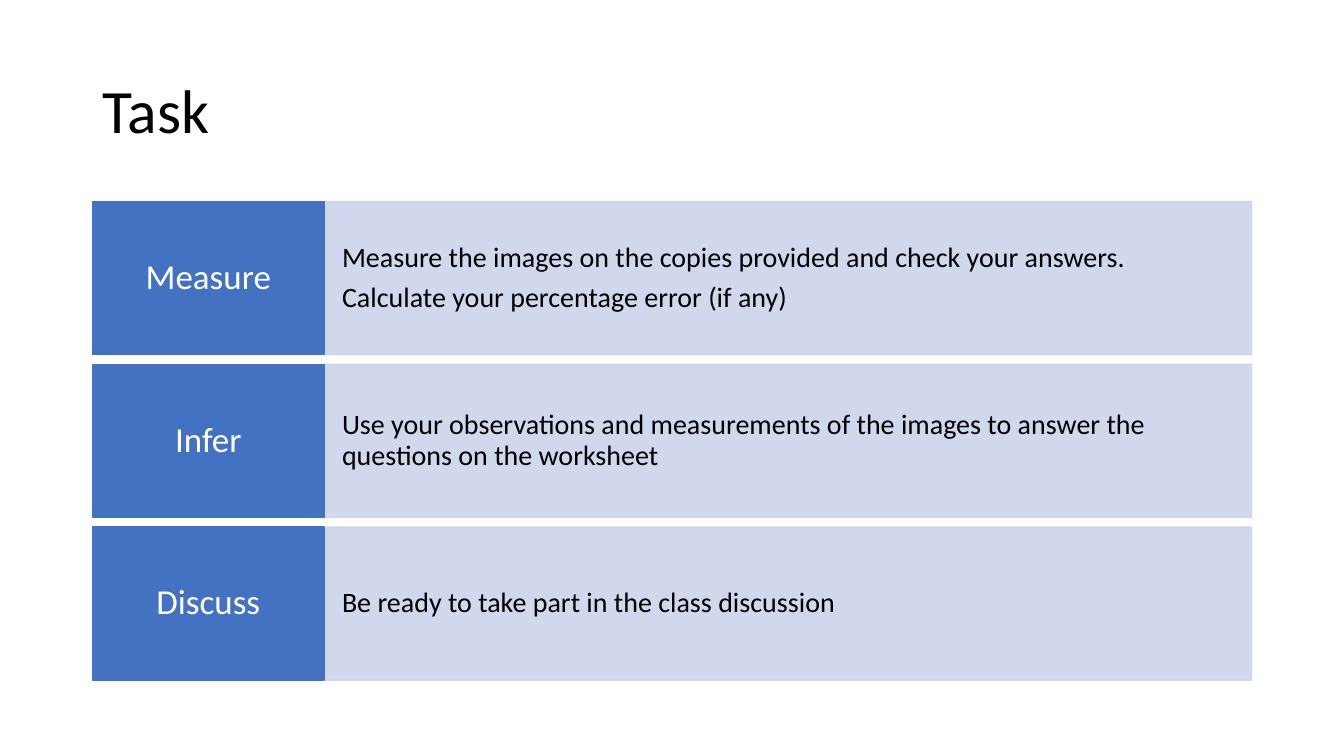
from lxml import etree
from pptx import Presentation
from pptx.dml.color import RGBColor
from pptx.enum import shapes, text
from pptx.oxml import ns
from pptx.util import Cm, Pt

BLACK = RGBColor(0x00, 0x00, 0x00)
WHITE = RGBColor(0xFF, 0xFF, 0xFF)
BLUE = RGBColor(0x43, 0x72, 0xC3)
PALE = RGBColor(0xCC, 0xD3, 0xEA)

LEFT, TOP, STEP, HIGH = 2.33, 5.08, 4.1, 3.86
SIDE, WIDE = 5.84, 23.37
LABEL = {"size": 25, "color": WHITE, "align": text.PP_ALIGN.CENTER, "pad": (0.3, 0.38)}
DETAIL = {"size": 20, "color": BLACK, "align": text.PP_ALIGN.LEFT, "pad": (0.45, 0.99)}
TITLE = {"size": 44, "color": BLACK, "align": text.PP_ALIGN.LEFT, "pad": (0.25, 0.13)}

TASKS = [
    ("Measure", ["Measure the images on the copies provided and check your answers.",
                 "Calculate your percentage error (if any)"]),
    ("Infer", ["Use your observations and measurements of the images to answer "
               "the questions on the worksheet"]),
    ("Discuss", ["Be ready to take part in the class discussion"]),
]


def write(shape, lines, style):
    frame = shape.text_frame
    across, down = (Cm(pad) for pad in style["pad"])
    form = {"word_wrap": True, "vertical_anchor": text.MSO_ANCHOR.MIDDLE,
            "margin_left": across, "margin_right": across,
            "margin_top": down, "margin_bottom": down}
    for name, value in form.items():
        setattr(frame, name, value)
    for index, line in enumerate(lines):
        para = frame.add_paragraph() if index else frame.paragraphs[0]
        form = {"text": line, "alignment": style["align"], "line_spacing": 0.9,
                "space_before": Pt(7 if index else 0)}
        for name, value in form.items():
            setattr(para, name, value)
        para.font.name = "Calibri"
        para.font.size = Pt(style["size"])
        para.font.color.rgb = style["color"]


def add_box(slide, left, top, width, color):
    box = slide.shapes.add_shape(shapes.MSO_SHAPE.RECTANGLE,
                                 Cm(left), Cm(top), Cm(width), Cm(HIGH))
    box.shadow.inherit = False
    box.fill.solid()
    box.fill.fore_color.rgb = color
    box.line.color.rgb = color
    box.line.width = Pt(1)
    return box


def fade(box, percent):
    for color in box.element.spPr.iter(ns.qn("a:srgbClr")):
        etree.SubElement(color, ns.qn("a:alpha")).set("val", str(percent * 1000))


def add_title(slide, words):
    box = slide.shapes.add_textbox(Cm(LEFT), Cm(1.01), Cm(SIDE + WIDE), Cm(3.68))
    write(box, [words], TITLE)


def add_task(slide, top, label, lines):
    detail = add_box(slide, LEFT + SIDE, top, WIDE, PALE)
    fade(detail, 90)
    write(detail, lines, DETAIL)
    write(add_box(slide, LEFT, top, SIDE, BLUE), [label], LABEL)


def main():
    deck = Presentation()
    deck.slide_width, deck.slide_height = Cm(33.87), Cm(19.05)
    slide = deck.slides.add_slide(deck.slide_layouts[6])
    add_title(slide, "Task")
    for row, (label, lines) in enumerate(TASKS):
        add_task(slide, TOP + row * STEP, label, lines)
    deck.save("out.pptx")


if __name__ == "__main__":
    main()
